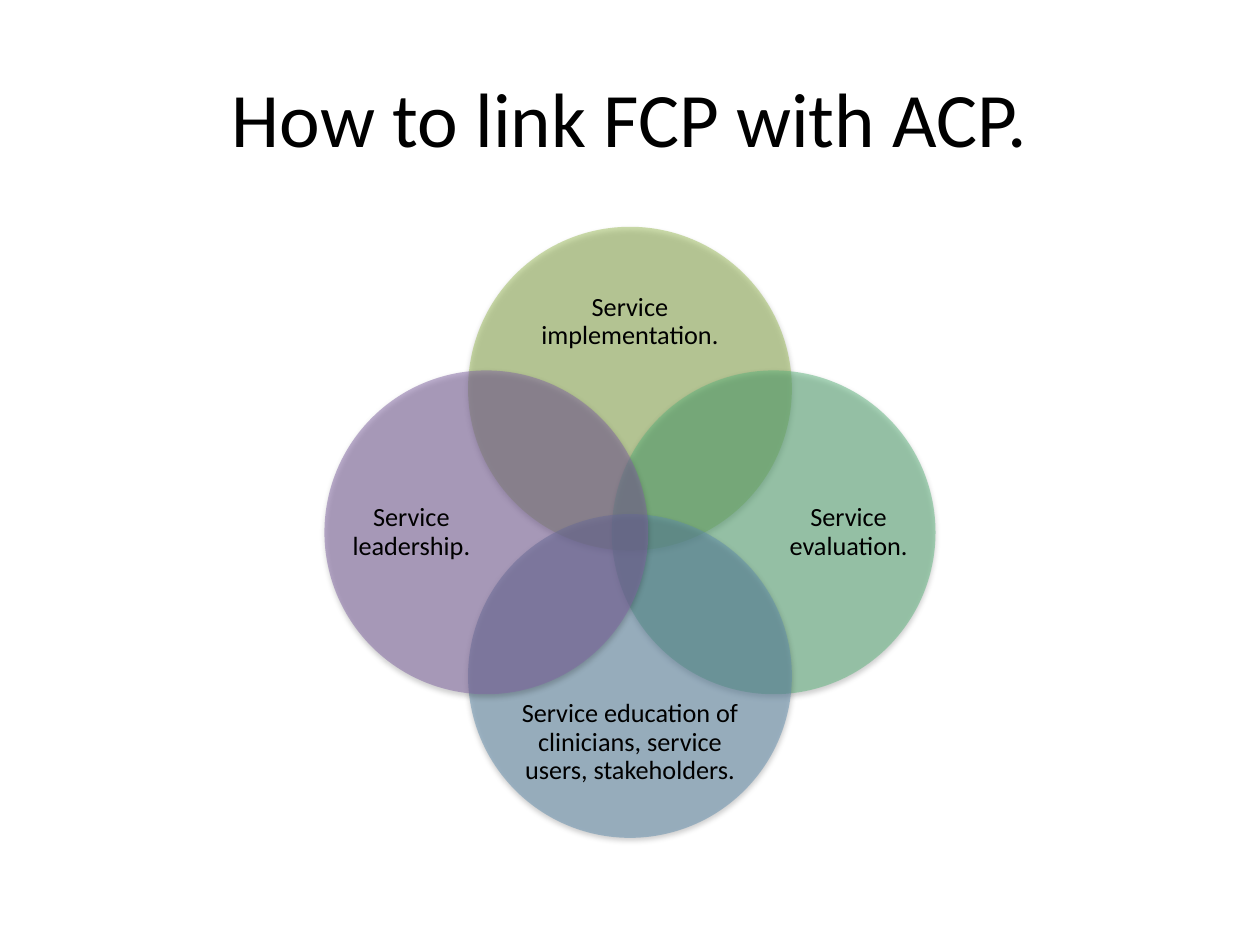
import pptx
import pptx.dml.color
import pptx.enum.shapes
import pptx.enum.text
import pptx.oxml
import pptx.oxml.ns
import pptx.util
from pptx.dml.color import RGBColor
from pptx.util import Inches, Pt

BLACK = RGBColor(0x00, 0x00, 0x00)
OLIVE = RGBColor(0x9B, 0xBB, 0x59)
GREEN = RGBColor(0x5C, 0xB3, 0x7C)
BLUE = RGBColor(0x60, 0x8C, 0xAB)
PURPLE = RGBColor(0x80, 0x64, 0xA2)
NS = pptx.oxml.ns.nsdecls("a")
SHADOW = (f'<a:outerShdw {NS} blurRad="{Pt(3.1)}" dist="{Pt(1.6)}" dir="5400000" '
          'rotWithShape="0"><a:srgbClr val="000000"><a:alpha val="38000"/>'
          '</a:srgbClr></a:outerShdw>')
ALPHA = f'<a:alpha {NS} val="50000"/>'

presentation = pptx.Presentation()
presentation.slide_width = Inches(10)
presentation.slide_height = Inches(7.5)
slide = presentation.slides.add_slide(presentation.slide_layouts[6])


def centred_box(x, y, width, height):
    """Left, top, width and height of a box around a centre, in inches."""
    return [Inches(v) for v in (x - width / 2, y - height / 2, width, height)]


def add_label(text, box, size, margin=0):
    label = slide.shapes.add_textbox(*box)
    frame = label.text_frame
    frame.word_wrap = True
    frame.vertical_anchor = pptx.enum.text.MSO_ANCHOR.MIDDLE
    frame.margin_left = frame.margin_right = Inches(margin)
    frame.margin_top = frame.margin_bottom = Inches(margin / 2)
    frame.text = text
    paragraph = frame.paragraphs[0]
    paragraph.alignment = pptx.enum.text.PP_ALIGN.CENTER
    paragraph.font.name = "Calibri"
    paragraph.font.size = Pt(size)
    paragraph.font.color.rgb = BLACK
    return paragraph


# Title
add_label("How to link FCP with ACP.", centred_box(5, 0.925, 9, 1.25), 44, 0.1)

# Four overlapping circles around one centre, clockwise from the top
CENTRE_X, CENTRE_Y = 5, 4.225
DIAMETER, CIRCLE_REACH = 2.57, 1.14
WIDE = (1.98, 0.82, 1.67)    # label width, height, distance from the centre
TALL = (0.99, 1.98, 1.735)
services = [
    ("Service implementation.", OLIVE, 0, -1, WIDE),
    ("Service evaluation.", GREEN, 1, 0, TALL),
    ("Service education of clinicians, service users, stakeholders.", BLUE, 0, 1, WIDE),
    ("Service leadership.", PURPLE, -1, 0, TALL),
]
for text, colour, dx, dy, (width, height, label_reach) in services:
    circle = slide.shapes.add_shape(
        pptx.enum.shapes.MSO_SHAPE.OVAL,
        *centred_box(CENTRE_X + dx * CIRCLE_REACH, CENTRE_Y + dy * CIRCLE_REACH,
                     DIAMETER, DIAMETER))
    circle.fill.solid()
    circle.fill.fore_color.rgb = colour
    circle.line.fill.background()
    circle.shadow.inherit = False

    # Half transparent, with a soft shadow below
    properties = circle.element.spPr
    properties.find(".//" + pptx.oxml.ns.qn("a:srgbClr")).append(pptx.oxml.parse_xml(ALPHA))
    properties.find(pptx.oxml.ns.qn("a:effectLst")).append(pptx.oxml.parse_xml(SHADOW))

    label = add_label(
        text,
        centred_box(CENTRE_X + dx * label_reach, CENTRE_Y + dy * label_reach, width, height),
        15)
    label.line_spacing = 0.9
    label.space_after = Pt(5.25)

presentation.save("out.pptx")
